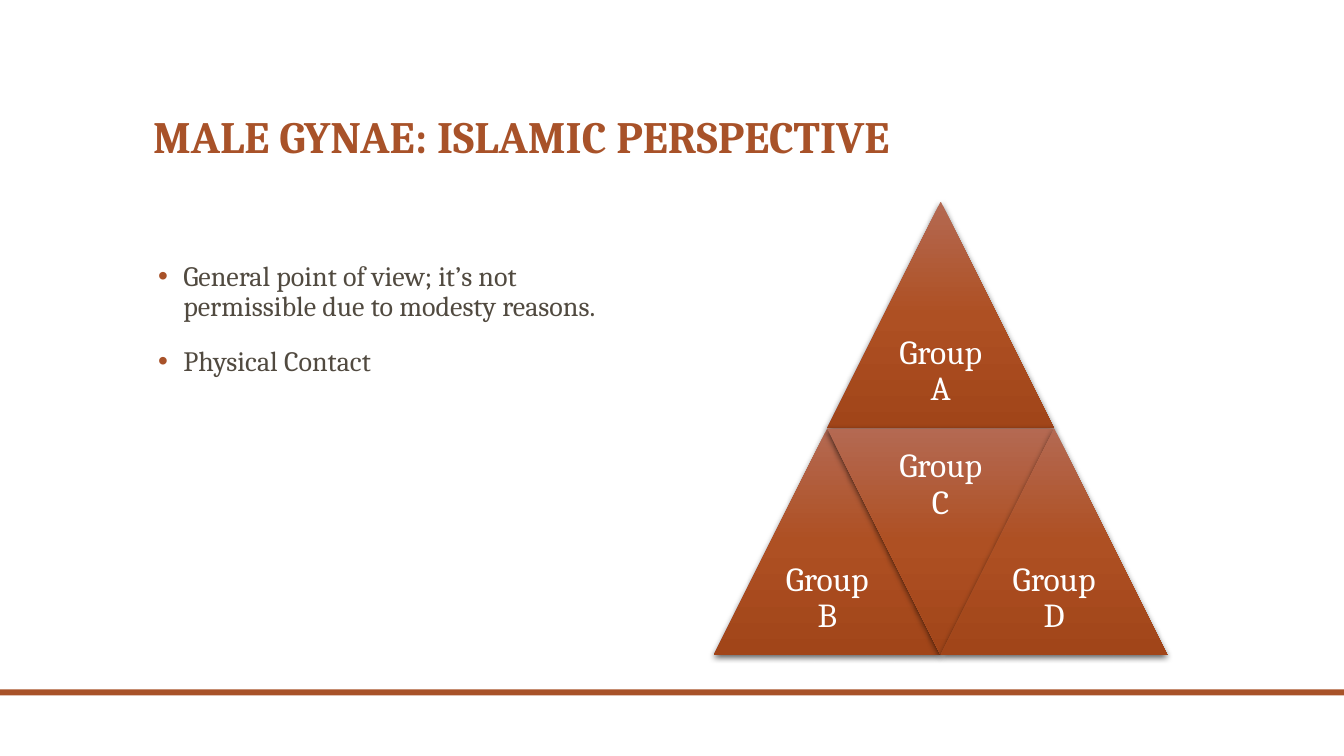
from pptx import Presentation
from pptx.dml.color import RGBColor
from pptx.enum.shapes import MSO_SHAPE as Kind
from pptx.enum.text import MSO_ANCHOR as Anchor, PP_ALIGN as Align
from pptx.oxml import parse_xml
from pptx.oxml.ns import nsdecls, qn
from pptx.util import Inches, Pt

RUST = RGBColor(0xA8, 0x52, 0x29)
BROWN = RGBColor(0x51, 0x4A, 0x40)
WHITE = RGBColor(0xFF, 0xFF, 0xFF)
STOPS = [(0, "B46952"), (50, "AE5023"), (100, "A14519")]
NS = nsdecls("a")
SIDE = 2.25
LEFT = 7.08
TOP = 2


def set_font(font, size, color, bold=False):
    font.name = "Cambria"
    font.size = Pt(size)
    font.color.rgb = color
    font.bold = bold


def add_text(slide, box, lines, size, color, anchor=Anchor.TOP, bold=False):
    frame = slide.shapes.add_textbox(*map(Inches, box)).text_frame
    frame.word_wrap = True
    frame.vertical_anchor = anchor
    frame.text = "\n".join(lines)
    for para in frame.paragraphs:
        para.line_spacing = 0.9
        for run in para.runs:
            set_font(run.font, size, color, bold)
    return frame


def add_bullets(frame, gap):
    for i, para in enumerate(frame.paragraphs):
        if i:
            para.space_before = Pt(gap)
        props = para._p.get_or_add_pPr()
        props.set("marL", str(Inches(0.3)))
        props.set("indent", str(Inches(-0.25)))
        props.append(parse_xml(f'<a:buClr {NS}><a:srgbClr val="{RUST}"/></a:buClr>'))
        props.append(parse_xml(f'<a:buFont {NS} typeface="Arial"/>'))
        props.append(parse_xml(f'<a:buChar {NS} char="•"/>'))


def add_bar(slide):
    bar = slide.shapes.add_shape(Kind.RECTANGLE, 0, Inches(6.84), Inches(13.33), Inches(0.06))
    bar.shadow.inherit = False
    bar.fill.solid()
    bar.fill.fore_color.rgb = RUST
    bar.line.fill.background()


def add_group(slide, name, col, row, down=False):
    x = LEFT + col * SIDE / 2
    y = TOP + row * SIDE
    shape = slide.shapes.add_shape(
        Kind.ISOSCELES_TRIANGLE, Inches(x), Inches(y), Inches(SIDE), Inches(SIDE))
    shape.rotation = 180 if down else 0
    shape.line.fill.background()
    shape.shadow.inherit = False
    props = shape._element.spPr
    stops = "".join(
        f'<a:gs pos="{pos * 1000}"><a:srgbClr val="{color}"/></a:gs>' for pos, color in STOPS)
    props.insert(2, parse_xml(
        f'<a:gradFill {NS} rotWithShape="0"><a:gsLst>{stops}</a:gsLst>'
        '<a:lin ang="5400000" scaled="0"/></a:gradFill>'))
    props.find(qn("a:effectLst")).append(parse_xml(
        f'<a:outerShdw {NS} blurRad="{Pt(4.5)}" dist="{Pt(1.5)}" dir="5400000" rotWithShape="0">'
        '<a:srgbClr val="000000"><a:alpha val="63000"/></a:srgbClr></a:outerShdw>'))

    half = SIDE / 2
    box = (x + half / 2, y if down else y + half, half, half)
    frame = add_text(slide, box, [name], 24, WHITE, Anchor.MIDDLE)
    frame.margin_left = frame.margin_right = Inches(0.1)
    frame.margin_top = frame.margin_bottom = Inches(0.1)
    frame.paragraphs[0].alignment = Align.CENTER


def main():
    deck = Presentation()
    deck.slide_width = Inches(13.33)
    deck.slide_height = Inches(7.5)
    slide = deck.slides.add_slide(deck.slide_layouts[6])
    add_bar(slide)
    add_text(slide, (1.42, 0.42, 10.5, 1.25), ["MALE GYNAE: ISLAMIC PERSPECTIVE"],
             32, RUST, Anchor.BOTTOM, True)
    points = ["General point of view; it’s not permissible due to modesty reasons.",
              "Physical Contact"]
    add_bullets(add_text(slide, (1.42, 2.55, 5.17, 3.95), points, 20, BROWN), 18)
    add_group(slide, "Group A", 1, 0)
    add_group(slide, "Group B", 0, 1)
    add_group(slide, "Group C", 1, 1, True)
    add_group(slide, "Group D", 2, 1)
    deck.save("out.pptx")


if __name__ == "__main__":
    main()
